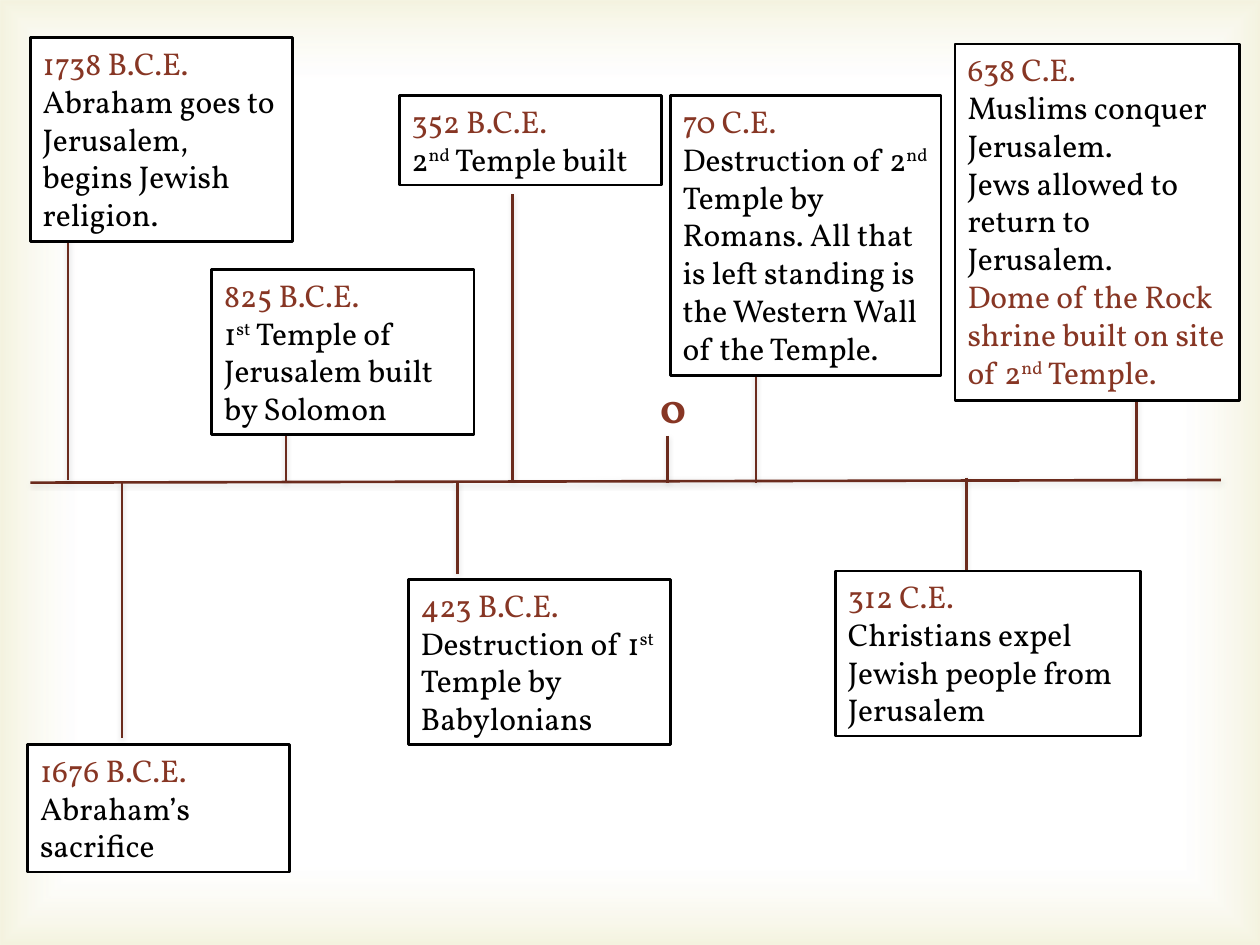
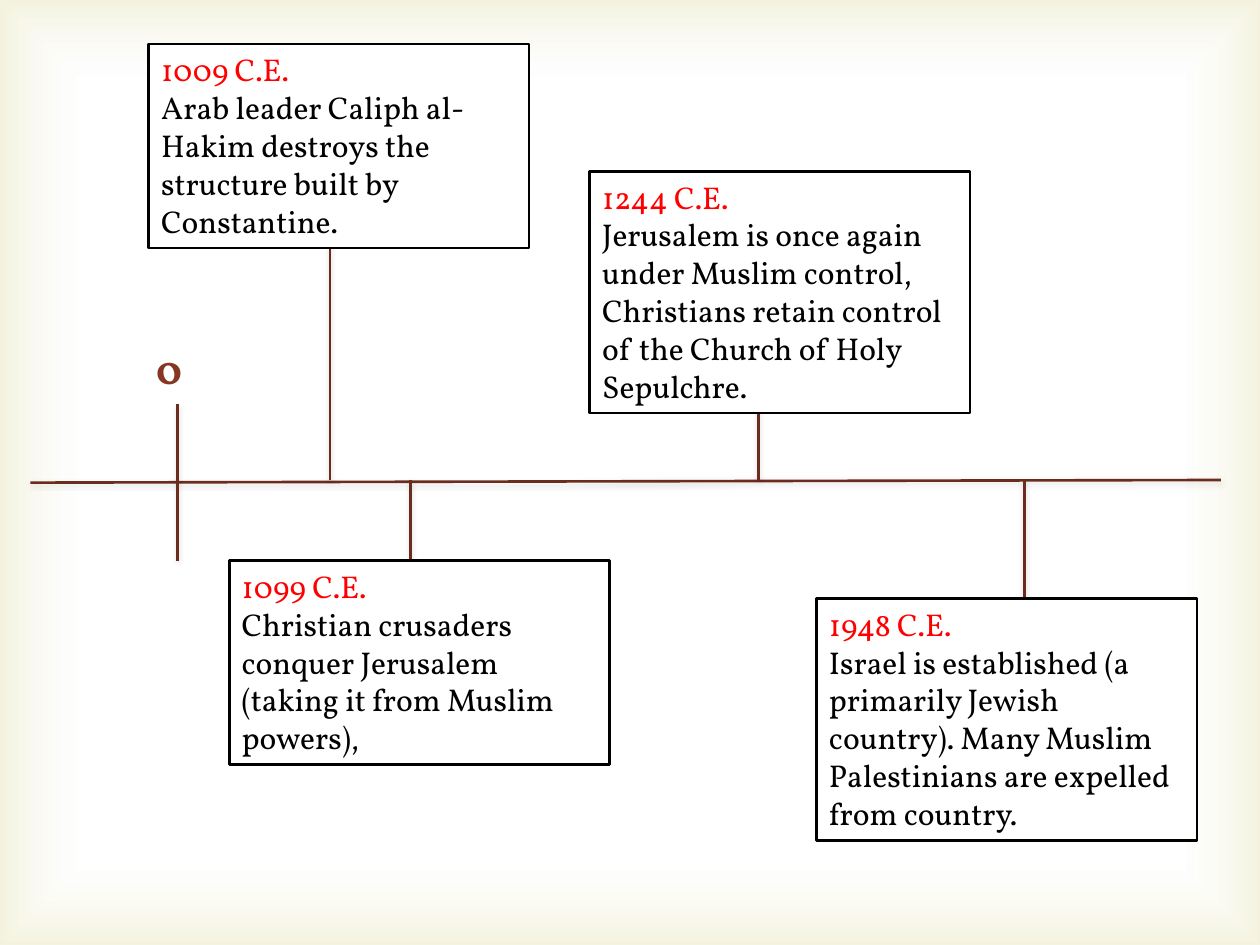
from pptx import Presentation
from pptx.dml.color import RGBColor
from pptx.enum import shapes, text
from pptx.oxml import parse_xml
from pptx.oxml.ns import nsdecls, qn
from pptx.util import Pt

WHITE = RGBColor(0xFF, 0xFF, 0xFF)
BLACK = RGBColor(0x00, 0x00, 0x00)
MAROON = RGBColor(0x87, 0x36, 0x24)
LINE_BROWN = RGBColor(0x6B, 0x2B, 0x1D)
RED = RGBColor(0xFF, 0x00, 0x00)
FONT = "Vollkorn"

GLOW = f"""<a:gradFill {nsdecls('a')} rotWithShape="1"><a:gsLst>
<a:gs pos="83000"><a:srgbClr val="FFFFFF"><a:alpha val="11000"/></a:srgbClr></a:gs>
<a:gs pos="100000"><a:srgbClr val="D1CA75"><a:alpha val="23000"/></a:srgbClr></a:gs>
</a:gsLst><a:path path="rect"><a:fillToRect l="50000" t="50000" r="50000" b="50000"/></a:path>
</a:gradFill>"""
LINE_SHADOW = f"""<a:effectLst {nsdecls('a')}>
<a:outerShdw blurRad="38100" dist="12700" dir="5400000" rotWithShape="0">
<a:srgbClr val="000000"><a:alpha val="15000"/></a:srgbClr></a:outerShdw></a:effectLst>"""

# Each event: box (left, top, width, height), stem (x, from y, to y),
# date, description, highlighted closing line. ^ encloses superscripts.
ANCIENT_EVENTS = [
    ((17.3, 21.6, 149.8, 116.6), (38.9, 110.9, 274.3), "1738 B.C.E.",
     "Abraham goes to Jerusalem, begins Jewish religion.", ""),
    ((15.8, 425.5, 149.8, 72.7), (69.8, 275.8, 421.9), "1676 B.C.E.",
     "Abraham’s sacrifice", ""),
    ((121, 154.1, 149.8, 94.3), (163.4, 201.6, 275.8), "825 B.C.E.",
     "1^st^ Temple of Jerusalem built by Solomon", ""),
    ((228.2, 54.7, 149.8, 51.1), (293, 110.9, 274.3), "352 B.C.E.",
     "2^nd^ Temple built", ""),
    ((233.3, 331.2, 149.8, 94.3), (261.4, 275.8, 328.3), "423 B.C.E.",
     "Destruction of 1^st^ Temple by Babylonians", ""),
    ((383, 54.7, 154.8, 159.8), (432, 210.2, 275.8), "70 C.E.",
     "Destruction of 2^nd^ Temple by Romans. All that is left standing is "
     "the Western Wall of the Temple.", ""),
    ((477.4, 326.2, 174.2, 94.3), (552.2, 272.9, 326.2), "312 C.E.",
     "Christians expel Jewish people from Jerusalem", ""),
    ((545.8, 25.2, 162.7, 203.8), (649.4, 127.4, 274.3), "638 C.E.",
     "Muslims conquer Jerusalem. \vJews allowed to return to Jerusalem.",
     "Dome of the Rock shrine built on site of 2^nd^ Temple."),
]
LATER_EVENTS = [
    ((85, 25.2, 217.4, 116.6), (188.6, 127.4, 274.3), "1009 C.E.",
     "Arab leader Caliph al-Hakim destroys the structure built by Constantine.", ""),
    ((131, 320.4, 217.4, 116.6), (234.7, 274.3, 320.4), "1099 C.E.",
     "Christian crusaders conquer Jerusalem (taking it from Muslim powers),", ""),
    ((337, 97.9, 217.4, 138.2), (433.4, 214.6, 274.3), "1244 C.E.",
     "Jerusalem is once again under Muslim control, Christians retain control "
     "of the Church of Holy Sepulchre.", ""),
    ((466.6, 342, 217.4, 138.2), (585.4, 274.3, 380.9), "1948 C.E.",
     "Israel is established (a primarily Jewish country). Many Muslim "
     "Palestinians are expelled from country.", ""),
]
# Date colour, events, stem of year zero, position of its label
TIMELINES = [
    (MAROON, ANCIENT_EVENTS, (381.6, 249.1, 275.8), (370.1, 214.6)),
    (RED, LATER_EVENTS, (101.5, 231.1, 320.4), (82.1, 192.2)),
]


def draw_line(slide, x1, y1, x2, y2):
    line = slide.shapes.add_connector(
        shapes.MSO_CONNECTOR.STRAIGHT, Pt(x1), Pt(y1), Pt(x2), Pt(y2))
    line.line.color.rgb = LINE_BROWN
    line.line.width = Pt(1.5)
    line.element.spPr.append(parse_xml(LINE_SHADOW))


def write(paragraph, wording, color, size=18, bold=False):
    pieces = wording.split("^")
    paragraph.text = pieces[0]
    paragraph.alignment = text.PP_ALIGN.LEFT
    for index, piece in enumerate(pieces[1:], 1):
        run = paragraph.add_run()
        run.text = piece
        if index % 2:
            run.font._element.set("baseline", "30000")
    for run in paragraph.runs:
        run.font.name = FONT
        run.font.size = Pt(size)
        run.font.bold = bold
        run.font.color.rgb = color


prs = Presentation()
prs.slide_width, prs.slide_height = Pt(720), Pt(540)
blank = prs.slide_layouts[6]

for date_color, events, zero_stem, zero_label in TIMELINES:
    slide = prs.slides.add_slide(blank)

    # Shared edge glow, moved to the layout once
    if len(prs.slides) == 1:
        glow = slide.shapes.add_shape(
            shapes.MSO_SHAPE.RECTANGLE, 0, 0, prs.slide_width, prs.slide_height)
        glow.shadow.inherit = False
        glow.line.fill.background()
        glow.fill.gradient()
        properties = glow.element.spPr
        properties.replace(properties.find(qn("a:gradFill")), parse_xml(GLOW))
        blank.shapes.element.insert(2, glow.element)

    # Time axis and stems
    draw_line(slide, 17.3, 275.8, 697.7, 274.3)
    for x, start, end in [event[1] for event in events] + [zero_stem]:
        draw_line(slide, x, start, x, end)

    # Event boxes
    for bounds, stem, date, description, highlight in events:
        box = slide.shapes.add_shape(
            shapes.MSO_SHAPE.RECTANGLE, *[Pt(length) for length in bounds])
        box.shadow.inherit = False
        box.fill.solid()
        box.fill.fore_color.rgb = WHITE
        box.line.color.rgb = BLACK
        box.line.width = Pt(1.5)
        frame = box.text_frame
        frame.word_wrap = True
        frame.auto_size = text.MSO_AUTO_SIZE.SHAPE_TO_FIT_TEXT
        frame.vertical_anchor = text.MSO_ANCHOR.TOP
        write(frame.paragraphs[0], date, date_color)
        write(frame.add_paragraph(), description, BLACK)
        if highlight:
            write(frame.add_paragraph(), highlight, MAROON)

    # Year zero
    left, top = zero_label
    zero = slide.shapes.add_textbox(Pt(left), Pt(top), Pt(38.9), Pt(36))
    zero.text_frame.word_wrap = True
    write(zero.text_frame.paragraphs[0], "0", MAROON, 24, True)

prs.save("out.pptx")
